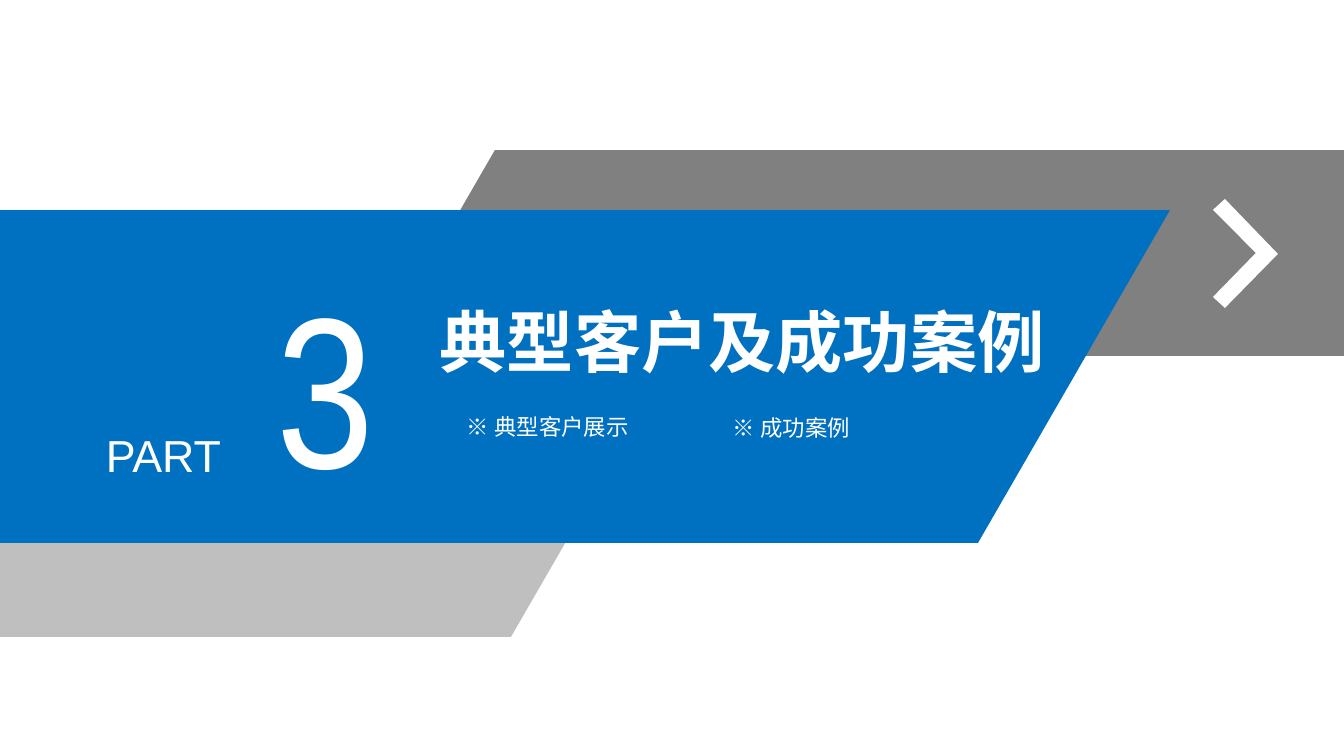
"""Build the section divider slide for part 3: typical customers and success cases."""
import math
from dataclasses import dataclass

import pptx
import pptx.dml.color
import pptx.enum.text
import pptx.oxml.ns
import pptx.util
from lxml import etree

EMU_PER_PX = 914400 / 134.4
SLIDE_W, SLIDE_H = 1344, 756
SLANT = math.tan(math.radians(30))


@dataclass(frozen=True)
class Theme:
    blue: str = "0070C0"
    dark: str = "808080"
    light: str = "BFBFBF"
    white: str = "FFFFFF"
    latin: str = "Arial"
    narrow: str = "Arial Narrow"
    chinese: str = "Noto Sans CJK SC"
    number_size: int = 115
    title_size: int = 36
    part_size: int = 24
    topic_size: int = 12


THEME = Theme()
CENTER = pptx.enum.text.PP_ALIGN.CENTER
LEFT = pptx.enum.text.PP_ALIGN.LEFT

BANDS = [
    {"outer": SLIDE_W, "slant_top": 495, "top": 150, "bottom": 356, "color": THEME.dark},
    {"outer": 0, "slant_top": 630, "top": 431, "bottom": 637, "color": THEME.light},
    {"outer": 0, "slant_top": 1170, "top": 210, "bottom": 543, "color": THEME.blue},
]
CHEVRON = [(1225, 199), (1278, 254), (1225, 308), (1213, 297), (1256, 253), (1213, 210)]
PART = ("PART", (87, 421, 153, 69))
NUMBER = ("3", (202, 247, 246, 274))
TITLE = ("典型客户及成功案例", (423, 293, 638, 95))
TOPICS = [
    ("※ 典型客户展示", (458, 409, 203, 36)),
    ("※ 成功案例", (724, 410, 145, 36)),
]


def px(length):
    return pptx.util.Emu(round(length * EMU_PER_PX))


def add_outline(slide, points, color):
    builder = slide.shapes.build_freeform(*points[0], scale=EMU_PER_PX)
    builder.add_line_segments(points[1:], close=True)
    outline = builder.convert_to_shape()
    outline.shadow.inherit = False
    outline.fill.solid()
    outline.fill.fore_color.rgb = pptx.dml.color.RGBColor.from_string(color)
    outline.line.fill.background()


def add_band(slide, outer, slant_top, top, bottom, color):
    slant_bottom = round(slant_top - (bottom - top) * SLANT)
    corners = [(outer, top), (slant_top, top), (slant_bottom, bottom), (outer, bottom)]
    add_outline(slide, corners, color)


def add_text(slide, text, box, *, size, font, bold=False, align=CENTER, wrap=True, inset=(13, 7)):
    frame = slide.shapes.add_textbox(*map(px, box)).text_frame
    frame.word_wrap = wrap
    frame.auto_size = pptx.enum.text.MSO_AUTO_SIZE.SHAPE_TO_FIT_TEXT
    frame.margin_left = frame.margin_right = px(inset[0])
    frame.margin_top = frame.margin_bottom = px(inset[1])
    paragraph = frame.paragraphs[0]
    paragraph.alignment = align
    run = paragraph.add_run()
    run.text = text
    run.font.size = pptx.util.Pt(size)
    run.font.bold = bold
    run.font.color.rgb = pptx.dml.color.RGBColor.from_string(THEME.white)
    run.font.name = font
    east_asian = etree.SubElement(run._r.get_or_add_rPr(), pptx.oxml.ns.qn("a:ea"))
    east_asian.set("typeface", font)


def main():
    deck = pptx.Presentation()
    deck.slide_width, deck.slide_height = px(SLIDE_W), px(SLIDE_H)
    slide = deck.slides.add_slide(deck.slide_layouts[6])
    for band in BANDS:
        add_band(slide, **band)
    add_text(slide, *PART, size=THEME.part_size, font=THEME.latin)
    add_text(slide, *NUMBER, size=THEME.number_size, font=THEME.narrow)
    add_text(slide, *TITLE, size=THEME.title_size, font=THEME.chinese, bold=True, wrap=False)
    for topic, box in TOPICS:
        add_text(slide, topic, box, size=THEME.topic_size, font=THEME.chinese,
                 align=LEFT, inset=(9, 4))
    add_outline(slide, CHEVRON, THEME.white)
    deck.save("out.pptx")


if __name__ == "__main__":
    main()
